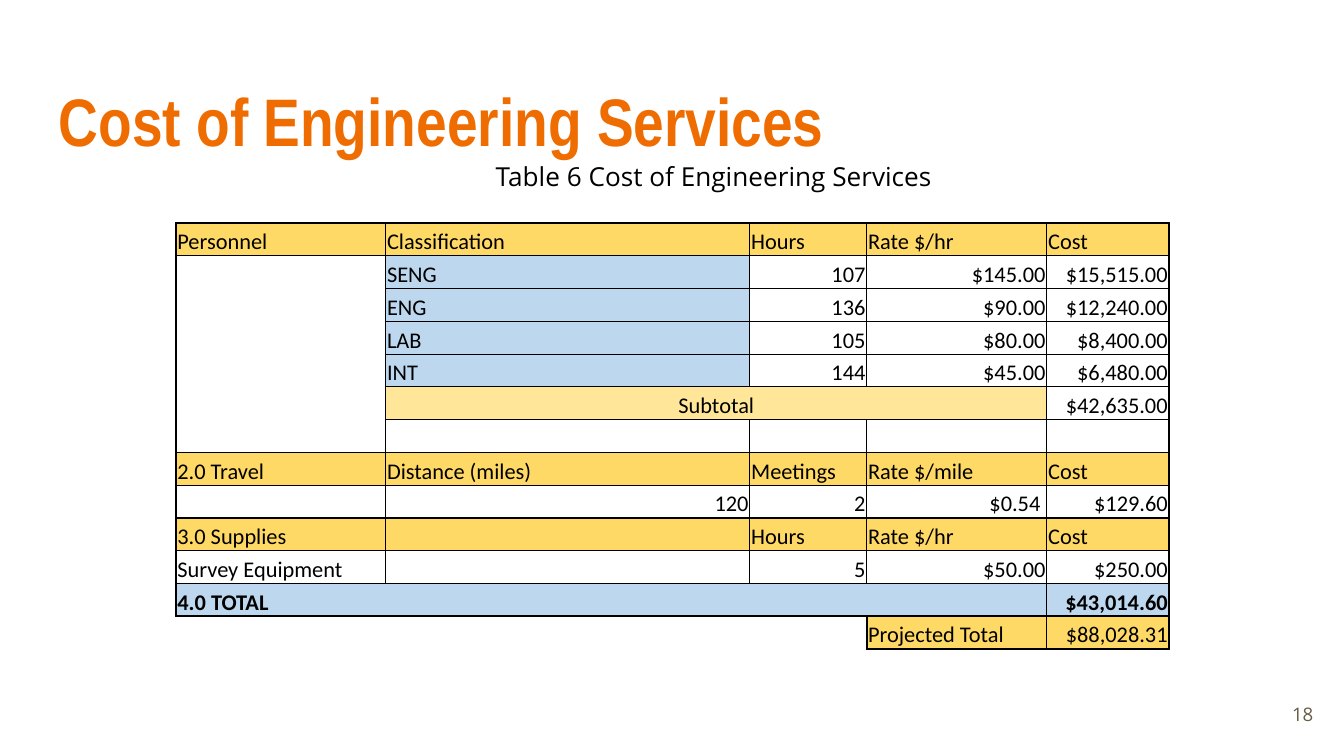
"""Build the slide with the cost table for engineering services."""
from dataclasses import dataclass
from typing import Optional

import lxml.etree
import pptx
import pptx.dml.color
import pptx.enum.text
import pptx.oxml.ns
import pptx.util

Inches = pptx.util.Inches
Pt = pptx.util.Pt
Align = pptx.enum.text.PP_ALIGN
Anchor = pptx.enum.text.MSO_ANCHOR


@dataclass(frozen=True)
class TextStyle:
    font: str
    size: int
    color: str
    bold: bool = False


@dataclass(frozen=True)
class Theme:
    title: TextStyle = TextStyle("Arial Narrow", 36, "EF6C00", True)
    caption: TextStyle = TextStyle("Open Sans", 14, "000000")
    number: TextStyle = TextStyle("Open Sans", 10, "695D46")
    cell: TextStyle = TextStyle("Calibri", 12, "000000")
    total: TextStyle = TextStyle("Calibri", 12, "000000", True)
    border: str = "000000"
    gold: str = "FFD966"
    pale_gold: str = "FFE699"
    blue: str = "BDD7EE"
    white: str = "FFFFFF"
    thin: float = 0.5
    thick: float = 1


THEME = Theme()


@dataclass(frozen=True)
class Label:
    text: str
    left: float
    top: float
    width: float
    height: float
    style: TextStyle
    align: Align = Align.LEFT
    anchor: Anchor = Anchor.TOP


@dataclass(frozen=True)
class CostRow:
    texts: tuple[str, ...]
    fills: tuple[Optional[str], ...] = (None,) * 5
    style: TextStyle = THEME.cell


LABELS = (
    Label("Cost of Engineering Services", 0.34, 0.49, 9.32, 0.77, THEME.title),
    Label("Table 6 Cost of Engineering Services", 3.59, 1.09, 3.49, 0.26, THEME.caption),
    Label("18", 9.27, 5.1, 0.6, 0.43, THEME.number, Align.RIGHT, Anchor.MIDDLE),
)
COLUMN_WIDTHS = (1.56, 2.71, 0.87, 1.34, 0.91)
HEADER = (THEME.gold,) * 5
BLANK = (THEME.white,) + (None,) * 4
STAFF = (THEME.white, THEME.blue) + (None,) * 3
SUBTOTAL = (THEME.white,) + (THEME.pale_gold,) * 3 + (None,)
TOTAL = (THEME.blue,) * 5
PROJECTED = (None,) * 3 + (THEME.gold,) * 2
ROWS = (
    CostRow(("Personnel", "Classification", "Hours", "Rate $/hr", "Cost"), HEADER),
    CostRow(("", "SENG", "107", "$145.00", "$15,515.00"), STAFF),
    CostRow(("", "ENG", "136", "$90.00", "$12,240.00"), STAFF),
    CostRow(("", "LAB", "105", "$80.00", "$8,400.00"), STAFF),
    CostRow(("", "INT", "144", "$45.00", "$6,480.00"), STAFF),
    CostRow(("", "Subtotal", "", "", "$42,635.00"), SUBTOTAL),
    CostRow(("",) * 5, BLANK),
    CostRow(("2.0 Travel", "Distance (miles)", "Meetings", "Rate $/mile", "Cost"), HEADER),
    CostRow(("", "120", "2", "$0.54 ", "$129.60")),
    CostRow(("3.0 Supplies", "", "Hours", "Rate $/hr", "Cost"), HEADER),
    CostRow(("Survey Equipment", "", "5", "$50.00", "$250.00")),
    CostRow(("4.0 TOTAL", "", "", "", "$43,014.60"), TOTAL, THEME.total),
    CostRow(("", "", "", "Projected Total", "$88,028.31"), PROJECTED),
)
SUBTOTAL_ROW, TOTAL_ROW, PROJECTED_ROW = 5, 11, 12
SECTION_LINES = (0, 7, 9, 12)


def style_paragraph(paragraph, style: TextStyle, align: Align) -> None:
    """Apply alignment and font to a paragraph."""
    paragraph.alignment = align
    paragraph.font.name = style.font
    paragraph.font.size = Pt(style.size)
    paragraph.font.bold = style.bold
    paragraph.font.color.rgb = pptx.dml.color.RGBColor.from_string(style.color)


def add_label(slide, label: Label) -> None:
    """Add one text box."""
    shape = slide.shapes.add_textbox(
        Inches(label.left), Inches(label.top), Inches(label.width), Inches(label.height))
    frame = shape.text_frame
    frame.word_wrap = True
    frame.vertical_anchor = label.anchor
    frame.margin_left = frame.margin_right = Inches(0.1)
    frame.margin_top = frame.margin_bottom = Inches(0.1)
    paragraph = frame.paragraphs[0]
    paragraph.text = label.text
    style_paragraph(paragraph, label.style, label.align)


def horizontal_weight(line: int, column: int) -> float:
    """Return the width of the rule above the row with the index line."""
    if line == len(ROWS):
        return THEME.thick if column >= 3 else 0
    if line in SECTION_LINES:
        return THEME.thick
    return 0 if column == 0 and 2 <= line <= 6 else THEME.thin


def vertical_weight(line: int, row: int) -> float:
    """Return the width of the rule left of the column with the index line."""
    if row == PROJECTED_ROW and line <= 3:
        return THEME.thick if line == 3 else 0
    if row == TOTAL_ROW and 1 <= line <= 3:
        return 0
    return THEME.thick if line in (0, len(COLUMN_WIDTHS)) else THEME.thin


def add_border(cell, side: str, weight: float) -> None:
    """Draw one side of a cell, or clear it when the weight is zero."""
    qn = pptx.oxml.ns.qn
    properties = cell._tc.get_or_add_tcPr()
    line = lxml.etree.SubElement(properties, qn(f"a:ln{side}"), w=str(int(Pt(weight))))
    if weight:
        fill = lxml.etree.SubElement(line, qn("a:solidFill"))
        lxml.etree.SubElement(fill, qn("a:srgbClr"), val=THEME.border)
    else:
        lxml.etree.SubElement(line, qn("a:noFill"))


def cell_alignment(text: str) -> Align:
    """Set amounts to the right and words to the left."""
    if text == "Subtotal":
        return Align.CENTER
    return Align.RIGHT if text.startswith("$") or text.isdigit() else Align.LEFT


def fill_cell(cell, row: int, column: int) -> None:
    """Give a cell its borders, fill and text."""
    cost_row = ROWS[row]
    text, color = cost_row.texts[column], cost_row.fills[column]
    add_border(cell, "L", vertical_weight(column, row))
    add_border(cell, "R", vertical_weight(column + 1, row))
    add_border(cell, "T", horizontal_weight(row, column))
    add_border(cell, "B", horizontal_weight(row + 1, column))
    if color:
        cell.fill.solid()
        cell.fill.fore_color.rgb = pptx.dml.color.RGBColor.from_string(color)
    else:
        cell.fill.background()
    cell.margin_left = cell.margin_right = cell.margin_top = Inches(0.01)
    cell.margin_bottom = 0
    cell.vertical_anchor = Anchor.BOTTOM
    paragraph = cell.text_frame.paragraphs[0]
    paragraph.text = text
    style_paragraph(paragraph, cost_row.style, cell_alignment(text))
    if not text:
        lxml.etree.SubElement(paragraph._p, pptx.oxml.ns.qn("a:endParaRPr"),
                              sz=str(cost_row.style.size * 100))


def add_cost_table(slide) -> None:
    """Add the table of costs."""
    table = slide.shapes.add_table(len(ROWS), len(COLUMN_WIDTHS), Inches(1.31), Inches(1.66),
                                   Inches(sum(COLUMN_WIDTHS)), Inches(3.17)).table
    table.first_row = table.horz_banding = False
    for column, width in zip(table.columns, COLUMN_WIDTHS):
        column.width = Inches(width)
    for row in range(len(ROWS)):
        for column in range(len(COLUMN_WIDTHS)):
            fill_cell(table.cell(row, column), row, column)
    table.cell(SUBTOTAL_ROW, 1).merge(table.cell(SUBTOTAL_ROW, 3))


def main() -> None:
    """Build and save the presentation."""
    presentation = pptx.Presentation()
    presentation.slide_width = Inches(10)
    presentation.slide_height = presentation.slide_width * 9 // 16
    slide = presentation.slides.add_slide(presentation.slide_layouts[6])
    for label in LABELS:
        add_label(slide, label)
    add_cost_table(slide)
    presentation.save("out.pptx")


if __name__ == "__main__":
    main()
